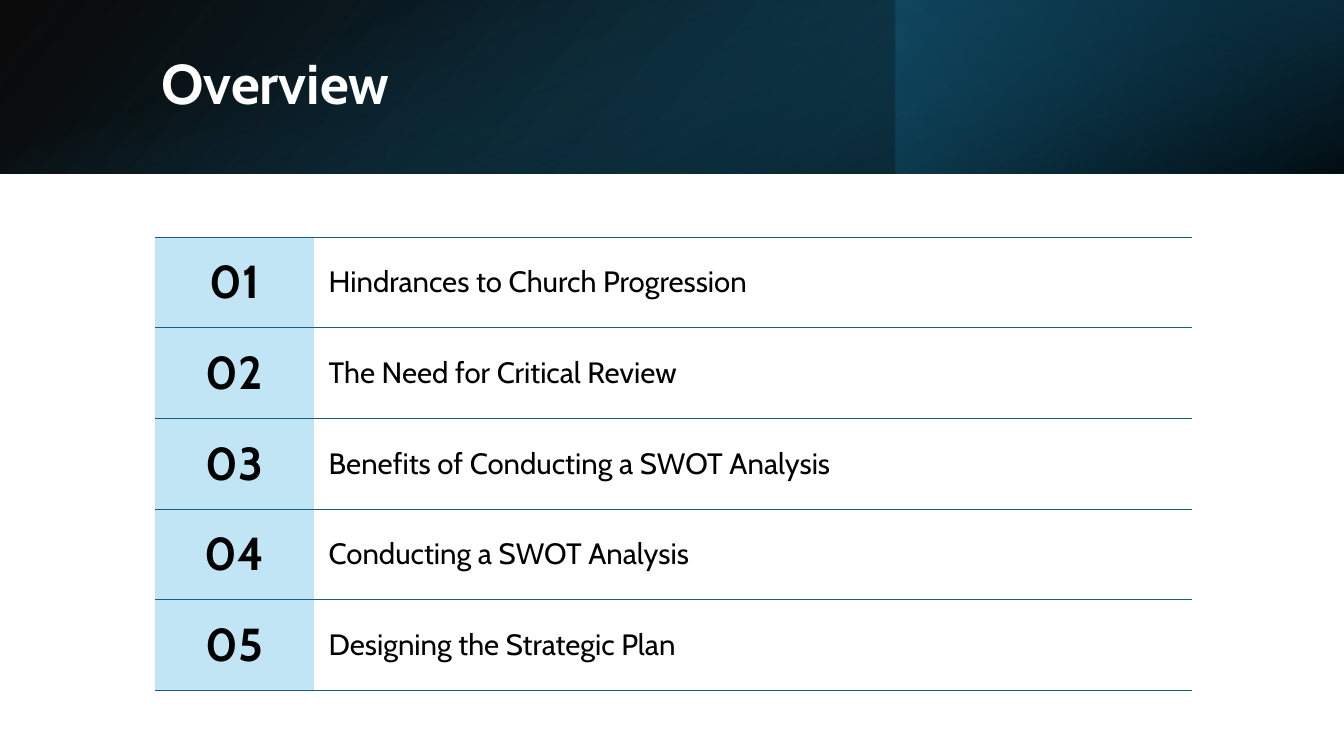
from dataclasses import dataclass

from lxml.etree import SubElement
from pptx import Presentation
from pptx.dml.color import RGBColor
from pptx.enum.shapes import MSO_SHAPE as Preset
from pptx.enum.text import MSO_ANCHOR as Anchor, MSO_AUTO_SIZE as AutoSize, PP_ALIGN as Align
from pptx.oxml import parse_xml
from pptx.oxml.ns import nsdecls, qn
from pptx.util import Inches, Pt


@dataclass(frozen=True)
class Theme:
    font: str = "Cabin"
    black: str = "000000"
    white: str = "FFFFFF"
    navy: str = "0B3041"
    ocean: str = "104862"
    teal: str = "156082"
    pale: str = "C1E5F5"
    title_size: int = 40
    number_size: int = 33
    topic_size: int = 21
    rule_width: float = 0.5


THEME = Theme()
WIDTH, HEIGHT = 13.33, 7.5
BANNER_HEIGHT = 1.72
TOPICS = [
    "Hindrances to Church Progression",
    "The Need for Critical Review",
    "Benefits of Conducting a SWOT Analysis",
    "Conducting a SWOT Analysis",
    "Designing the Strategic Plan",
]


def style_para(para, size, color, bold, align=Align.LEFT):
    para.alignment = align
    para.font.name = THEME.font
    para.font.size = Pt(size)
    para.font.bold = bold
    para.font.color.rgb = RGBColor.from_string(color)


def add_gradient(page, box, clockwise_angle, stops, rotation=0, flipped=False):
    panel = page.shapes.add_shape(Preset.RECTANGLE, *map(Inches, box))
    panel.shadow.inherit = False
    panel.rotation = rotation
    panel.line.fill.background()
    panel.fill.gradient()
    panel.fill.gradient_angle = 360 - clockwise_angle
    for stop, (position, color, _) in zip(panel.fill.gradient_stops, stops):
        stop.position = position
        stop.color.rgb = RGBColor.from_string(color)
    properties = panel._element.spPr
    for tint, (_, _, opacity) in zip(properties.iter(qn("a:srgbClr")), stops):
        SubElement(tint, qn("a:alpha")).set("val", str(opacity * 1000))
    if flipped:
        properties.find(qn("a:xfrm")).set("flipH", "1")


def add_banner(page, box):
    left, top, width, height = box
    add_gradient(page, box, 140, [(0, THEME.black, 96), (1, THEME.ocean, 100)], flipped=True)
    third = width / 3
    add_gradient(page, (left + width - third, top, third, height), 320,
                 [(0.19, THEME.navy, 68), (1, THEME.teal, 79)], rotation=180)
    shift = (width - height) / 2
    add_gradient(page, (left + shift, top - shift, height, width), 340,
                 [(0.23, THEME.teal, 0), (0.99, THEME.black, 74)], rotation=90)


def place_title(page, text, box):
    title = page.shapes.title
    page.shapes._spTree.append(title._element)
    title.left, title.top, title.width, title.height = map(Inches, box)
    frame = title.text_frame
    frame.text = text
    frame.auto_size = AutoSize.NONE
    frame.vertical_anchor = Anchor.MIDDLE
    para = frame.paragraphs[0]
    para.line_spacing = 0.9
    style_para(para, THEME.title_size, THEME.white, True)


def add_rules(cell):
    for position, side in enumerate(("lnT", "lnB")):
        cell._tc.get_or_add_tcPr().insert(position, parse_xml(
            f'<a:{side} {nsdecls("a")} w="{Pt(THEME.rule_width)}"><a:solidFill>'
            f'<a:srgbClr val="{THEME.teal}"/></a:solidFill></a:{side}>'))


def fill_cell(cell, text, size, bold, align, background=None):
    cell.text = text
    cell.vertical_anchor = Anchor.MIDDLE
    cell.margin_left = cell.margin_right = Inches(0.15)
    cell.margin_top = cell.margin_bottom = Inches(0.15)
    if background:
        cell.fill.solid()
        cell.fill.fore_color.rgb = RGBColor.from_string(background)
    else:
        cell.fill.background()
    add_rules(cell)
    style_para(cell.text_frame.paragraphs[0], size, THEME.black, bold, align)


def add_agenda(page, box, topics):
    left, top, width, height = box
    number_width = 1.57
    table = page.shapes.add_table(len(topics), 2, *map(Inches, box)).table
    table.first_row = table.horz_banding = False
    table._tbl.tblPr.find(qn("a:tableStyleId")).text = "{2D5ABB26-0587-4C30-8999-92F81FD0307C}"
    table.columns[0].width = Inches(number_width)
    table.columns[1].width = Inches(width - number_width)
    for index, topic in enumerate(topics):
        table.rows[index].height = Inches(height / len(topics))
        fill_cell(table.cell(index, 0), f"{index + 1:02d}", THEME.number_size,
                  True, Align.CENTER, THEME.pale)
        fill_cell(table.cell(index, 1), topic, THEME.topic_size, False, Align.LEFT)


def build_overview(deck):
    page = deck.slides.add_slide(deck.slide_layouts.get_by_name("Title Only"))
    page.background.fill.solid()
    page.background.fill.fore_color.rgb = RGBColor.from_string(THEME.white)
    add_banner(page, (0, 0, WIDTH, BANNER_HEIGHT))
    place_title(page, "Overview", (1.5, 0.38, 10.98, 0.96))
    add_agenda(page, (1.54, 2.35, 10.28, 4.5), TOPICS)


def main():
    deck = Presentation()
    deck.slide_width, deck.slide_height = Inches(WIDTH), Inches(HEIGHT)
    build_overview(deck)
    deck.save("out.pptx")


if __name__ == "__main__":
    main()
